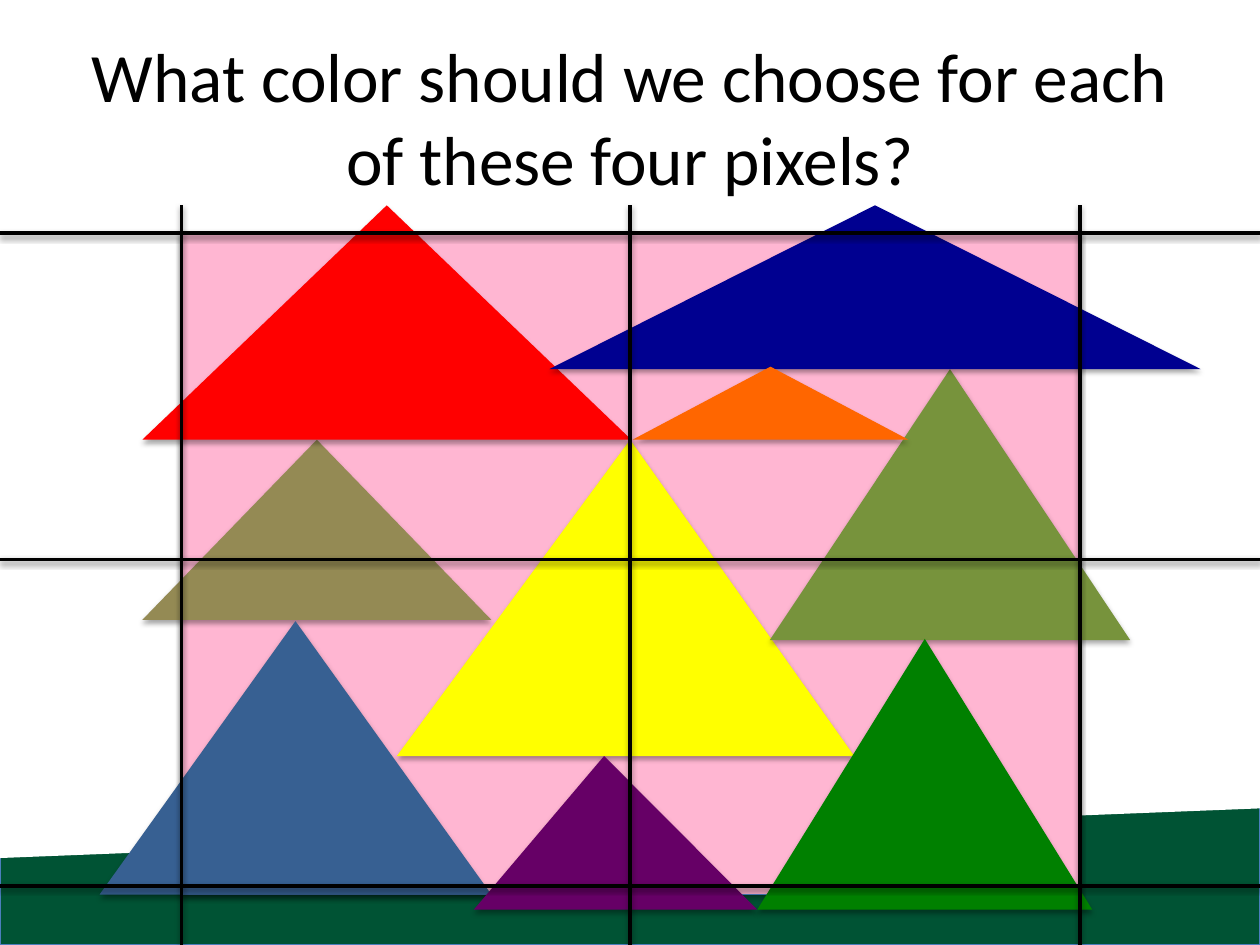
from lxml import etree
from pptx import Presentation
from pptx.dml.color import RGBColor
from pptx.enum.shapes import MSO_CONNECTOR, MSO_SHAPE as SHAPE
from pptx.enum.text import MSO_ANCHOR, MSO_AUTO_SIZE, PP_ALIGN
from pptx.oxml import parse_xml
from pptx.oxml.ns import nsdecls
from pptx.util import Inches, Pt


def add_shadow(s, alpha, dist):
    """Give a shape or connector a soft black shadow straight below it."""
    s._element.spPr.append(parse_xml(
        f'<a:effectLst {nsdecls("a")}>'
        f'<a:outerShdw blurRad="{Pt(3.1)}" dist="{Pt(dist)}" dir="5400000" rotWithShape="0">'
        f'<a:srgbClr val="000000"><a:alpha val="{alpha * 1000}"/></a:srgbClr>'
        '</a:outerShdw></a:effectLst>'))


def add_figure(kind, box, fill=None, line=None, adj=None, shadow=True):
    s = slide.shapes.add_shape(kind, *[Inches(v) for v in box])
    if fill:
        s.fill.solid()
        s.fill.fore_color.rgb = RGBColor.from_string(fill)
    else:
        s.fill.background()
    if line:
        s.line.color.rgb = RGBColor.from_string(line)
        s.line.width = Pt(0.75)
    else:
        s.line.fill.background()
    if adj is not None:
        s.adjustments[0] = adj
    if shadow:
        add_shadow(s, 35, 1.8)
    else:
        s.shadow.inherit = False
    return s


prs = Presentation()
prs.slide_width, prs.slide_height = Inches(10), Inches(7.5)
slide = prs.slides.add_slide(prs.slide_layouts[5])

# Title
title = slide.shapes.title
title.left, title.top = Inches(0.5), Inches(0.3)
title.width, title.height = Inches(9), Inches(1.25)
tf = title.text_frame
tf.text = "What color should we choose for each of these four pixels?"
tf.word_wrap = True
tf.auto_size = MSO_AUTO_SIZE.NONE
tf.vertical_anchor = MSO_ANCHOR.MIDDLE
p = tf.paragraphs[0]
p.alignment = PP_ALIGN.CENTER
p.font.name = "Calibri"
p.font.size = Pt(39.6)
p.font.color.rgb = RGBColor.from_string("000000")

# Green ground with a sloping white edge, then the pink pixel area
add_figure(SHAPE.RECTANGLE, (0, 5.61, 10, 1.89), "005334", "4B7EBC")
slope = add_figure(SHAPE.PARALLELOGRAM, (3.84, 0.65, 2.32, 10), "FFFFFF",
                   adj=0.17, shadow=False)
slope.rotation = 90
slope._element.spPr.xfrm.set("flipH", "1")
add_figure(SHAPE.RECTANGLE, (1.44, 1.85, 7.13, 5.25), "FFB6D2", "4B7EBC")

# Triangles: left, top, width, height, colour, apex position
triangles = [
    (1.13, 3.49, 2.77, 1.43, "948A54", 0.5),
    (3.15, 3.49, 3.63, 2.51, "FFFF00", 0.51),
    (6.11, 2.93, 2.86, 2.15, "77933C", 0.5),
    (0.79, 4.93, 3.11, 2.17, "376092", 0.5),
    (3.76, 6, 2.25, 1.22, "660066", 0.46),
    (6.01, 5.07, 2.66, 2.15, "008000", 0.5),
    (1.13, 1.63, 3.88, 1.86, "FF0000", 0.5),
    (4.36, 1.63, 5.17, 1.3, "000090", 0.5),
    (5.02, 2.91, 2.19, 0.58, "FF6600", 0.5),
]
for *box, color, apex in triangles:
    add_figure(SHAPE.ISOSCELES_TRIANGLE, box, color, adj=apex)

# Pixel grid: outline and lines
add_figure(SHAPE.RECTANGLE, (1.44, 1.85, 7.13, 5.18), line="000000")
rows = [(0, y, 10, y) for y in (1.85, 4.44, 7.03)]
columns = [(x, 1.63, x, 7.5) for x in (1.44, 5, 8.57)]
for ends in rows + columns:
    c = slide.shapes.add_connector(MSO_CONNECTOR.STRAIGHT, *[Inches(v) for v in ends])
    c.line.color.rgb = RGBColor.from_string("000000")
    c.line.width = Pt(2)
    add_shadow(c, 38, 1.6)

prs.save("out.pptx")
